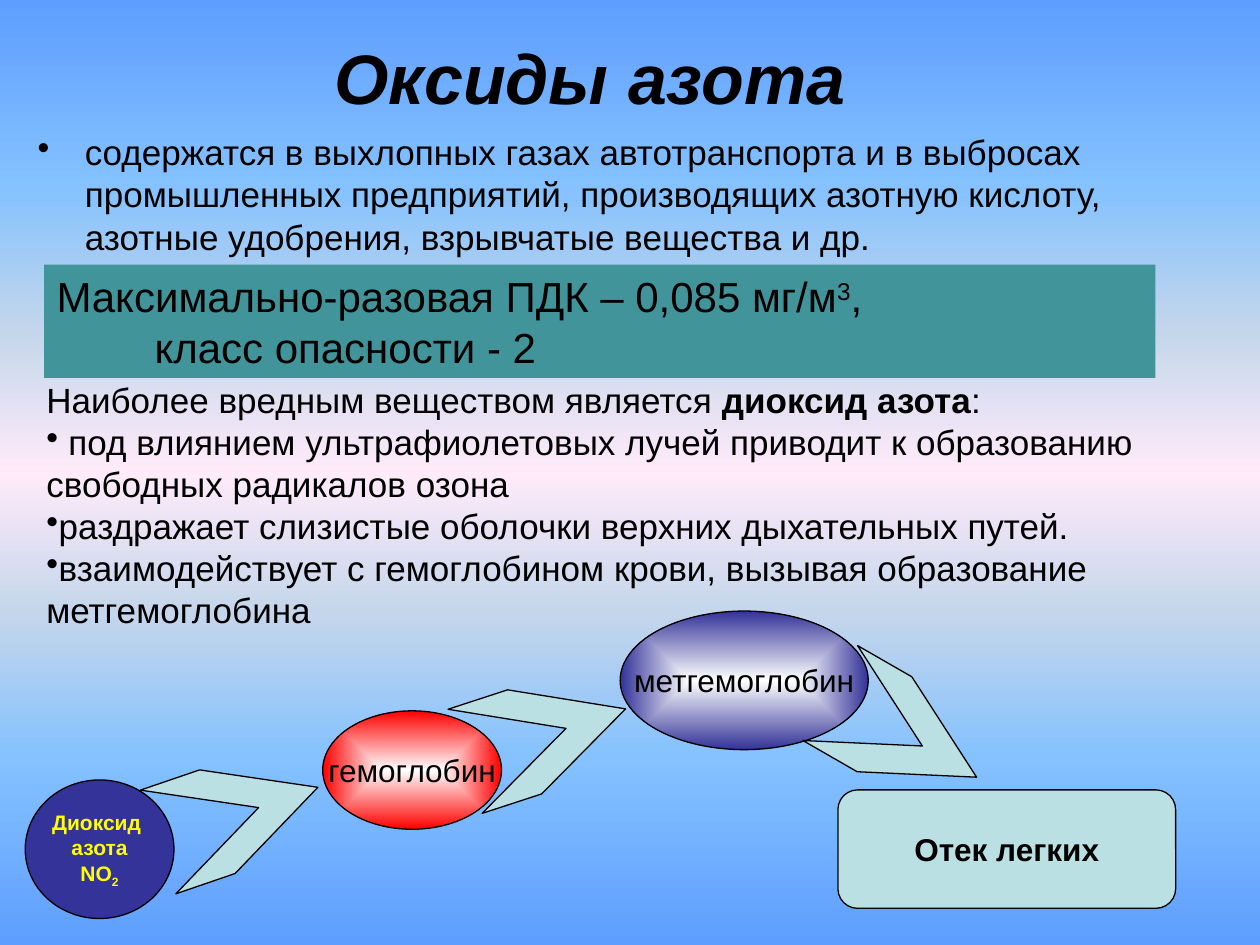
import pptx
import pptx.util
import pptx.oxml
import pptx.oxml.ns
import pptx.dml.color
import pptx.enum.shapes
import pptx.enum.text
from dataclasses import dataclass

Pt = pptx.util.Pt
Kind = pptx.enum.shapes.MSO_SHAPE
Align = pptx.enum.text.PP_ALIGN
Anchor = pptx.enum.text.MSO_ANCHOR


@dataclass(frozen=True)
class Theme:
    font: str = "Arial"
    ink: str = "000000"
    white: str = "FFFFFF"
    yellow: str = "FFFF00"
    navy: str = "333399"
    red: str = "FF0000"
    pale: str = "BBE0E3"
    teal: str = "40949A"
    sky: tuple = ((0, "5E9EFF"), (20, "85C2FF"), (35, "C4D6EB"), (50, "FFEBFA"),
                  (65, "C4D6EB"), (80, "85C2FF"), (100, "5E9EFF"))
    title: int = 40
    large: int = 24
    body: int = 20
    label: int = 18
    small: int = 12


T = Theme()


def color(code):
    return pptx.dml.color.RGBColor.from_string(code)


def blend(stops, shade):
    marks = "".join(
        f'<a:gs pos="{pos * 1000}"><a:srgbClr val="{code}"/></a:gs>'
        for pos, code in stops)
    return pptx.oxml.parse_xml(
        f'<a:gradFill {pptx.oxml.ns.nsdecls("a")} rotWithShape="1">'
        f'<a:gsLst>{marks}</a:gsLst>{shade}</a:gradFill>')


def swap(holder, fill):
    old = holder.find(pptx.oxml.ns.qn("a:gradFill"))
    holder.replace(old, fill)


def write(shape, paras, size=T.body, ink=T.ink, bold=False, italic=False,
          align=Align.LEFT, anchor=Anchor.TOP, wrap=True, dots=(),
          hang=0, gap=0):
    frame = shape.text_frame
    frame.word_wrap = wrap
    frame.vertical_anchor = anchor
    for i, runs in enumerate(paras):
        para = frame.paragraphs[0] if i == 0 else frame.add_paragraph()
        para.alignment = align
        para.space_before = Pt(gap if i else 0)
        props = para._p.get_or_add_pPr()
        if hang:
            props.set("marL", str(Pt(hang)))
            props.set("indent", str(-Pt(hang)))
        if i in dots:
            mark = pptx.oxml.parse_xml(
                f'<a:buChar {pptx.oxml.ns.nsdecls("a")} char="•"/>')
            props.append(mark)
        for part in [runs] if isinstance(runs, str) else runs:
            words, style = (part, {}) if isinstance(part, str) else part
            for j, line in enumerate(words.split("\n")):
                if j:
                    para.add_line_break()
                run = para.add_run()
                run.text = line
                font = run.font
                font.name = T.font
                font.size = Pt(size)
                font.bold = style.get("bold", bold)
                font.italic = italic
                font.color.rgb = color(ink)
                if "base" in style:
                    run._r.get_or_add_rPr().set("baseline", str(style["base"] * 1000))


def draw(slide, kind, box, fill, glow=None, line=T.ink, turn=0):
    shape = slide.shapes.add_shape(kind, *map(Pt, box))
    shape.shadow.inherit = False
    shape.rotation = turn
    if glow:
        shape.fill.gradient()
        shade = ('<a:path path="shape"><a:fillToRect l="50000" t="50000" '
                 'r="50000" b="50000"/></a:path>')
        swap(shape._element.spPr, blend(((0, glow), (100, fill)), shade))
    else:
        shape.fill.solid()
        shape.fill.fore_color.rgb = color(fill)
    if line:
        shape.line.color.rgb = color(line)
        shape.line.width = Pt(0.75)
    else:
        shape.line.fill.background()
    return shape


def back(slide):
    slide.background.fill.gradient()
    props = slide.background._cSld.bg.bgPr
    swap(props, blend(T.sky, '<a:lin ang="5400000" scaled="1"/>'))


def head(slide, box):
    title = slide.shapes.title
    title.left, title.top, title.width, title.height = map(Pt, box)
    write(title, ["Оксиды азота "], size=T.title, bold=True, italic=True,
          align=Align.CENTER, anchor=Anchor.MIDDLE)


def intro(slide, box):
    note = slide.shapes.add_textbox(*map(Pt, box))
    write(note, ["содержатся в выхлопных газах автотранспорта и в выбросах "
                 "промышленных предприятий, производящих азотную кислоту, "
                 "азотные удобрения, взрывчатые вещества и др."],
          dots=(0,), hang=27)


def harm(slide, box):
    note = slide.shapes.add_textbox(*map(Pt, box))
    write(note, [
        ["Наиболее вредным веществом является ",
         ("диоксид азота", {"bold": True}), ":"],
        " под влиянием ультрафиолетовых лучей приводит к образованию "
        "свободных радикалов озона",
        "раздражает слизистые оболочки верхних дыхательных путей.",
        "взаимодействует с гемоглобином крови, вызывая образование "
        "метгемоглобина"], dots=(1, 2, 3))


def flow(slide, box):
    left, top, width, height = box
    step = 170
    mid = dict(align=Align.CENTER, anchor=Anchor.MIDDLE, wrap=False)

    def node(kind, x, y, w, h, fill, paras, glow=None, **style):
        shape = draw(slide, kind, (left + x, top + y, w, h), fill, glow)
        write(shape, paras, **mid, **style)

    def arrow(x, y, turn):
        shape = draw(slide, Kind.CHEVRON, (left + x, top + y, 96.5, 62.6),
                     T.pale, turn=turn)
        shape.adjustments[0] = 0.97

    node(Kind.OVAL, 0, height - 79.2, 85, 79.2, T.navy,
         ["Диоксид ", "азота", ["NО", ("2", {"base": -25})]],
         size=T.small, ink=T.yellow, bold=True)
    arrow(73.4, 85, 341.1)
    node(Kind.OVAL, step, 57, 102.2, 67.7, T.red, ["гемоглобин"],
         glow=T.white, size=T.label)
    arrow(249, 39.6, 341.9)
    node(Kind.OVAL, 2 * step, 0, 141.8, 79.2, T.navy, ["метгемоглобин"],
         glow=T.white, size=T.label)
    arrow(453.6, 39.6, 29.9)
    node(Kind.ROUNDED_RECTANGLE, width - 193, 102.2, 193, 67.7, T.pale,
         ["Отек легких"], size=T.label, bold=True)


def limit(slide, box):
    band = draw(slide, Kind.RECTANGLE, box, T.teal, line=None)
    write(band, [["Максимально-разовая ПДК – 0,085 мг/м",
                  ("3", {"base": 30}), ", \nкласс опасности - 2"]],
          size=T.large, hang=56)


def main():
    deck = pptx.Presentation()
    deck.slide_width, deck.slide_height = Pt(720), Pt(540)
    slide = deck.slides.add_slide(deck.slide_layouts[5])
    back(slide)
    head(slide, (36, 21.6, 613.4, 44))
    intro(slide, (14.4, 71.3, 648, 85))
    harm(slide, (19.4, 213, 652.3, 151.2))
    flow(slide, (14.4, 349.2, 657.4, 175.7))
    limit(slide, (25.2, 151.2, 635, 64.8))
    deck.save("out.pptx")


if __name__ == "__main__":
    main()
